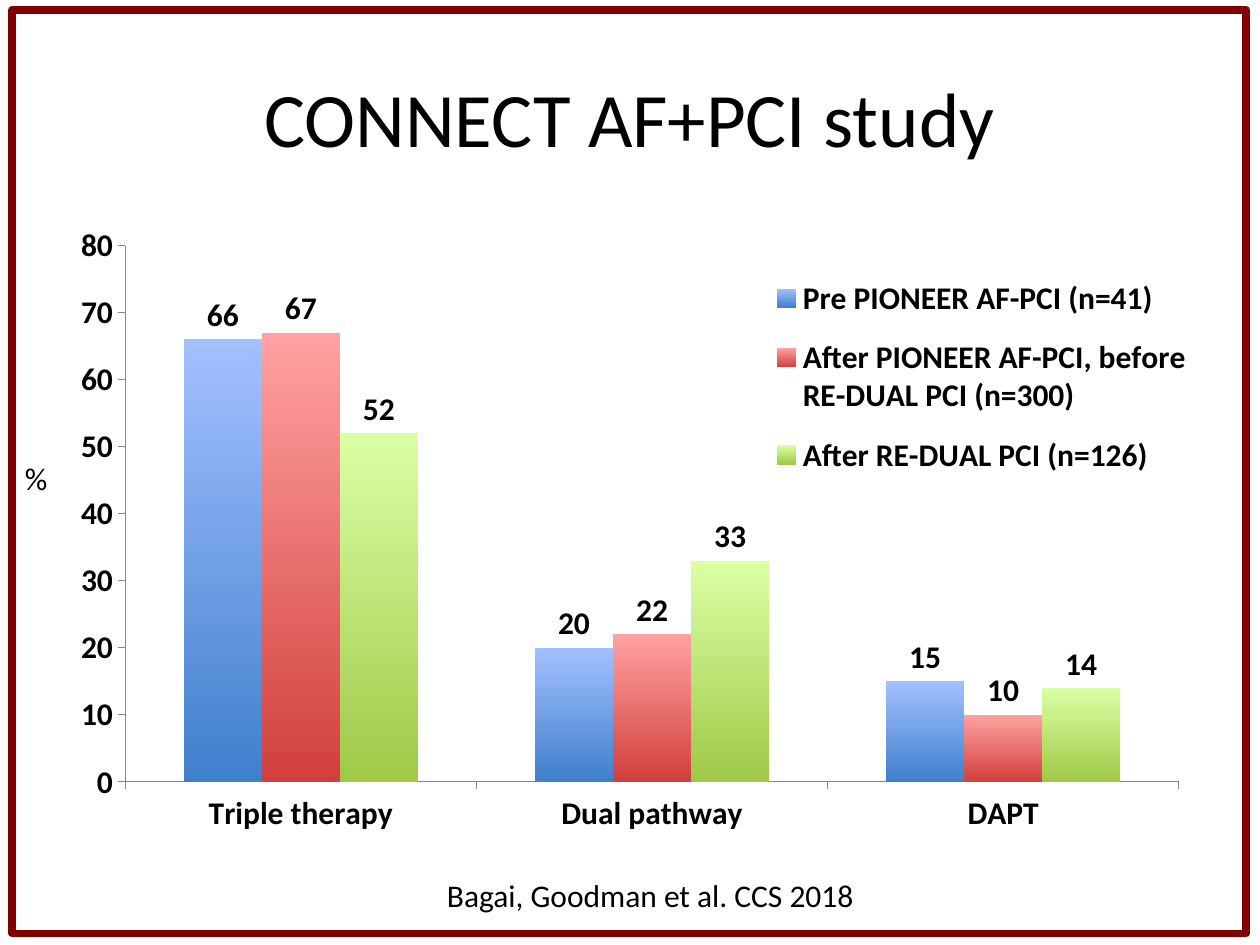
from lxml.etree import SubElement
from pptx import Presentation
from pptx.chart.data import CategoryChartData
from pptx.dml.color import RGBColor
from pptx.enum.chart import XL_CHART_TYPE, XL_LABEL_POSITION, XL_LEGEND_POSITION, XL_TICK_MARK
from pptx.enum.shapes import MSO_SHAPE
from pptx.enum.text import MSO_ANCHOR, PP_ALIGN
from pptx.oxml.ns import qn
from pptx.util import Cm, Pt

TITLE = "CONNECT AF+PCI study"
CATEGORIES = ["Triple therapy", "Dual pathway", "DAPT"]
SERIES = [
    ("Pre PIONEER AF-PCI (n=41)", [66, 20, 15], ("A3C0FF", "3F80CD")),
    ("After PIONEER AF-PCI, before RE-DUAL PCI (n=300)", [67, 22, 10], ("FFA2A1", "D1403C")),
    ("After RE-DUAL PCI (n=126)", [52, 33, 14], ("DAFFA4", "9ECA48")),
]
NOTES = [
    ("Bagai, Goodman et al. CCS 2018", (8.76, 17.53, 9.3, 1.02)),
    ("%", (0.25, 9.12, 1.02, 1.02)),
]
TITLE_AREA = (1.27, 0.76, 22.86, 3.18)
CHART_AREA = (1.27, 4.45, 22.86, 12.57)
BORDER_AREA = (0.25, 0.2, 24.87, 18.62)
PLOT_LAYOUT = {"x": 0.055, "y": 0.04, "w": 0.929, "h": 0.86}
LEGEND_LAYOUT = {"x": 0.62, "y": 0.06, "w": 0.38, "h": 0.38}
BODY_FONT = {"name": "Calibri", "size": Pt(18)}
TITLE_FONT = {"name": "Calibri", "size": Pt(44)}


def color(code):
    """Turn a hex string into a colour."""
    return RGBColor.from_string(code)


def lengths(area):
    """Turn left, top, width and height into lengths."""
    return [Cm(value) for value in area]


def format_font(font, values):
    """Apply font values in black."""
    for name, value in values.items():
        setattr(font, name, value)
    font.color.rgb = color("000000")


def set_layout(parent, fractions, inner=False):
    """Place a chart part by fractions of the chart area."""
    layout = parent.find(qn("c:layout"))
    if layout is None:
        layout = SubElement(parent, qn("c:layout"))
        anchor = parent.find(qn("c:legendPos"))
        if anchor is None:
            parent.insert(0, layout)
        else:
            anchor.addnext(layout)
    manual = SubElement(layout, qn("c:manualLayout"))
    settings = {"layoutTarget": "inner"} if inner else {}
    settings.update(xMode="edge", yMode="edge", **fractions)
    for name, value in settings.items():
        SubElement(manual, qn(f"c:{name}")).set("val", str(value))


def add_title(page):
    """Fill and place the title."""
    title = page.shapes.title
    title.left, title.top, title.width, title.height = lengths(TITLE_AREA)
    title.text_frame.vertical_anchor = MSO_ANCHOR.MIDDLE
    para = title.text_frame.paragraphs[0]
    para.alignment = PP_ALIGN.CENTER
    span = para.add_run()
    span.text = TITLE
    format_font(span.font, TITLE_FONT)


def add_therapy_chart(page):
    """Add the clustered columns with axes, labels and legend."""
    data = CategoryChartData(number_format="0")
    data.categories = CATEGORIES
    for name, values, _ in SERIES:
        data.add_series(name, values)
    chart = page.shapes.add_chart(
        XL_CHART_TYPE.COLUMN_CLUSTERED, *lengths(CHART_AREA), data).chart
    bold_font = {**BODY_FONT, "bold": True}
    format_font(chart.font, BODY_FONT)
    chart.has_title = False
    for axis in (chart.category_axis, chart.value_axis):
        axis.has_major_gridlines = False
        axis.major_tick_mark = XL_TICK_MARK.OUTSIDE
        axis.format.line.color.rgb = color("868686")
        format_font(axis.tick_labels.font, bold_font)
    for name, value in {"minimum_scale": 0, "maximum_scale": 80, "major_unit": 10}.items():
        setattr(chart.value_axis, name, value)
    chart.value_axis.tick_labels.number_format = "0"
    chart.value_axis.tick_labels.number_format_is_linked = False

    plot = chart.plots[0]
    plot.gap_width, plot.overlap, plot.vary_by_categories = 150, 0, False
    for series, (_, _, shades) in zip(plot.series, SERIES):
        fill = series.format.fill
        fill.gradient()
        fill.gradient_angle = 270
        for stop, shade in zip(fill.gradient_stops, shades):
            stop.color.rgb = color(shade)
        labels = series.data_labels
        for name, value in {"show_value": True, "number_format": "0",
                            "number_format_is_linked": False,
                            "position": XL_LABEL_POSITION.OUTSIDE_END}.items():
            setattr(labels, name, value)
        format_font(labels.font, bold_font)

    chart.has_legend = True
    legend = chart.legend
    legend.position = XL_LEGEND_POSITION.RIGHT
    legend.include_in_layout = False
    format_font(legend.font, bold_font)
    plot_area = chart.element.find(".//" + qn("c:plotArea"))
    set_layout(plot_area, PLOT_LAYOUT, inner=True)
    set_layout(chart.element.find(".//" + qn("c:legend")), LEGEND_LAYOUT)


def add_note(page, text, area):
    """Add a line of body text."""
    box = page.shapes.add_textbox(*lengths(area))
    box.text_frame.word_wrap = True
    span = box.text_frame.paragraphs[0].add_run()
    span.text = text
    format_font(span.font, BODY_FONT)


def add_border(page):
    """Frame the slide."""
    border = page.shapes.add_shape(MSO_SHAPE.RECTANGLE, *lengths(BORDER_AREA))
    border.shadow.inherit = False
    border.fill.background()
    border.line.color.rgb = color("800000")
    border.line.width = Pt(4.5)
    SubElement(border.line._get_or_add_ln(), qn("a:round"))


def main():
    """Build and save the slide."""
    deck = Presentation()
    deck.slide_width, deck.slide_height = Cm(25.4), Cm(19.05)
    page = deck.slides.add_slide(deck.slide_layouts[5])
    page.background.fill.solid()
    page.background.fill.fore_color.rgb = color("FFFFFF")
    add_title(page)
    add_therapy_chart(page)
    add_border(page)
    for text, area in NOTES:
        add_note(page, text, area)
    deck.save("out.pptx")


if __name__ == "__main__":
    main()
